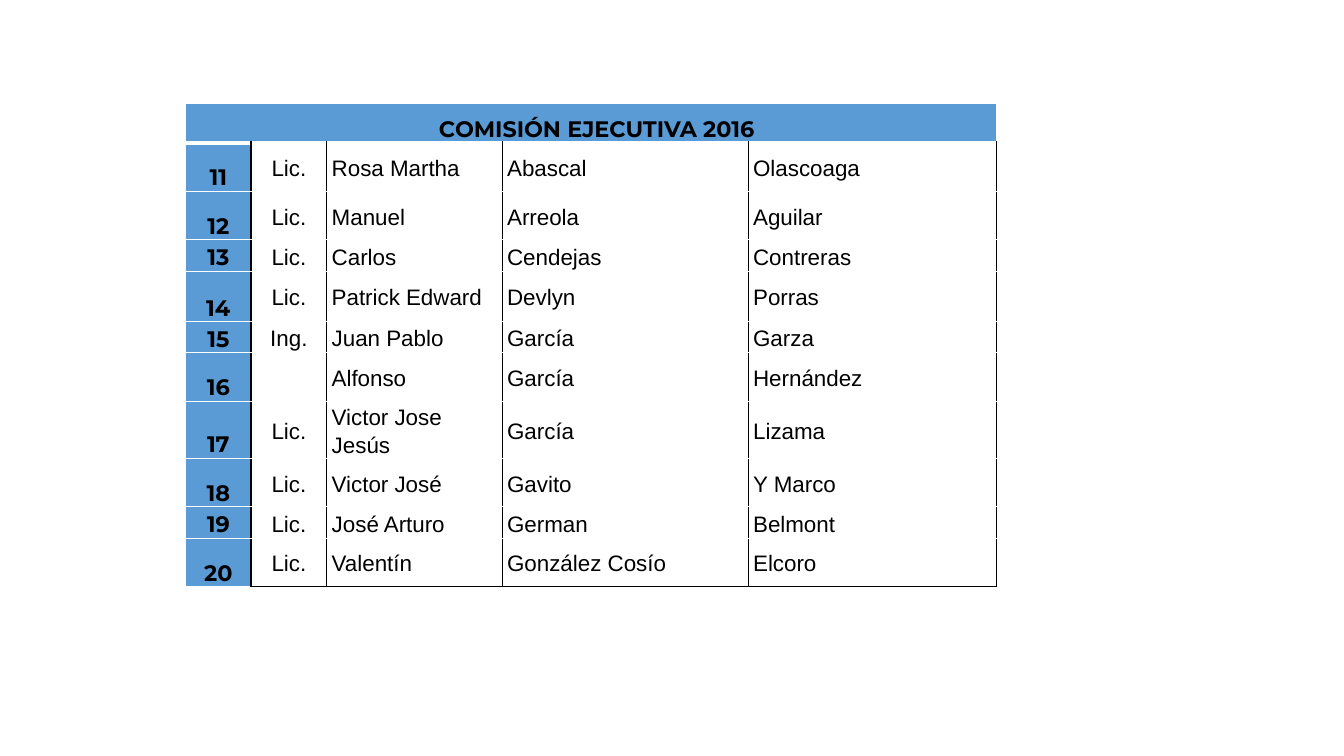
from pptx import Presentation
from pptx.dml.color import RGBColor as Rgb
from pptx.enum.text import MSO_ANCHOR as Anchor, PP_ALIGN as Align
from pptx.oxml import parse_xml
from pptx.oxml.ns import nsdecls
from pptx.util import Inches, Pt

BLUE, BLACK, WHITE = "5B9BD5", "000000", "FFFFFF"
TITLE = "COMISIÓN EJECUTIVA 2016"
FIRST = 11
PEOPLE = [
    ("Lic.", "Rosa Martha", "Abascal", "Olascoaga"),
    ("Lic.", "Manuel", "Arreola", "Aguilar"),
    ("Lic.", "Carlos", "Cendejas", "Contreras"),
    ("Lic.", "Patrick Edward", "Devlyn", "Porras"),
    ("Ing.", "Juan Pablo", "García", "Garza"),
    ("", "Alfonso", "García", "Hernández"),
    ("Lic.", "Victor Jose Jesús", "García", "Lizama"),
    ("Lic.", "Victor José", "Gavito", "Y Marco"),
    ("Lic.", "José Arturo", "German", "Belmont"),
    ("Lic.", "Valentín", "González Cosío", "Elcoro"),
]
WIDTHS = [0.65, 0.75, 1.74, 2.44, 2.46]
HEIGHTS = [0.39, 0.48, 0.48, 0.24, 0.5, 0.24, 0.48, 0.5, 0.48, 0.24, 0.48]


def color(code):
    return Rgb.from_string(code)


class Deck:
    head = dict(name="Montserrat", bold=True, size=Pt(16))
    body = dict(name="Arial", bold=False, size=Pt(16))

    def __init__(self):
        self.show = Presentation()
        self.show.slide_width = Inches(13.33)
        self.show.slide_height = Inches(7.5)
        self.slide = self.show.slides.add_slide(self.show.slide_layouts[6])

    def grid(self, left, top, widths, heights):
        frame = self.slide.shapes.add_table(
            len(heights), len(widths), Inches(left), Inches(top),
            Inches(sum(widths)), Inches(sum(heights)))
        table = frame.table
        table.first_row = table.horz_banding = False
        for col, width in zip(table.columns, widths):
            col.width = Inches(width)
        for row, height in zip(table.rows, heights):
            row.height = Inches(height)
        return table

    def cell(self, cell, text, font, align, fill=None, left=0.05):
        form = dict(margin_left=Inches(left), margin_right=Inches(0.05),
                    margin_top=0, margin_bottom=0,
                    vertical_anchor=Anchor.BOTTOM if fill else Anchor.MIDDLE)
        for key, value in form.items():
            setattr(cell, key, value)
        para = cell.text_frame.paragraphs[0]
        para.alignment, para.line_spacing = align, 1.15
        if text:
            run = para.add_run()
            run.text = text
            for key, value in font.items():
                setattr(run.font, key, value)
            run.font.color.rgb = color(BLACK)
        # Borders go in front of the fill
        if fill:
            cell.fill.solid()
            cell.fill.fore_color.rgb = color(fill)
        else:
            cell.fill.background()

    def edges(self, cell, **sides):
        props = cell._tc.get_or_add_tcPr()
        order = [side for side in "LRTB" if side in sides]
        for spot, side in enumerate(order):
            code, width = sides[side]
            props.insert(spot, parse_xml(
                f'<a:ln{side} {nsdecls("a")} w="{Pt(width)}"><a:solidFill>'
                f'<a:srgbClr val="{code}"/></a:solidFill></a:ln{side}>'))


def main():
    deck = Deck()
    table = deck.grid(1.84, 1.03, WIDTHS, HEIGHTS)
    dark, light = (BLACK, 1), (WHITE, 1)

    # Title row
    title = table.cell(0, 0)
    title.merge(table.cell(0, len(WIDTHS) - 1))
    deck.cell(title, TITLE, deck.head, Align.CENTER, BLUE, left=0.17)
    for cell in table.rows[0].cells:
        deck.edges(cell, L=light, R=light, T=light, B=(WHITE, 3))

    # Numbered people
    for row, person in enumerate(PEOPLE, 1):
        number = table.cell(row, 0)
        deck.cell(number, str(FIRST + row - 1), deck.head, Align.CENTER, BLUE)
        deck.edges(number, L=light, R=dark, B=light)
        for col, text in enumerate(person, 1):
            cell = table.cell(row, col)
            align = Align.CENTER if col == 1 else Align.LEFT
            deck.cell(cell, text, deck.body, align)
            deck.edges(cell, L=dark, R=dark, B=dark)

    deck.show.save("out.pptx")


if __name__ == "__main__":
    main()
